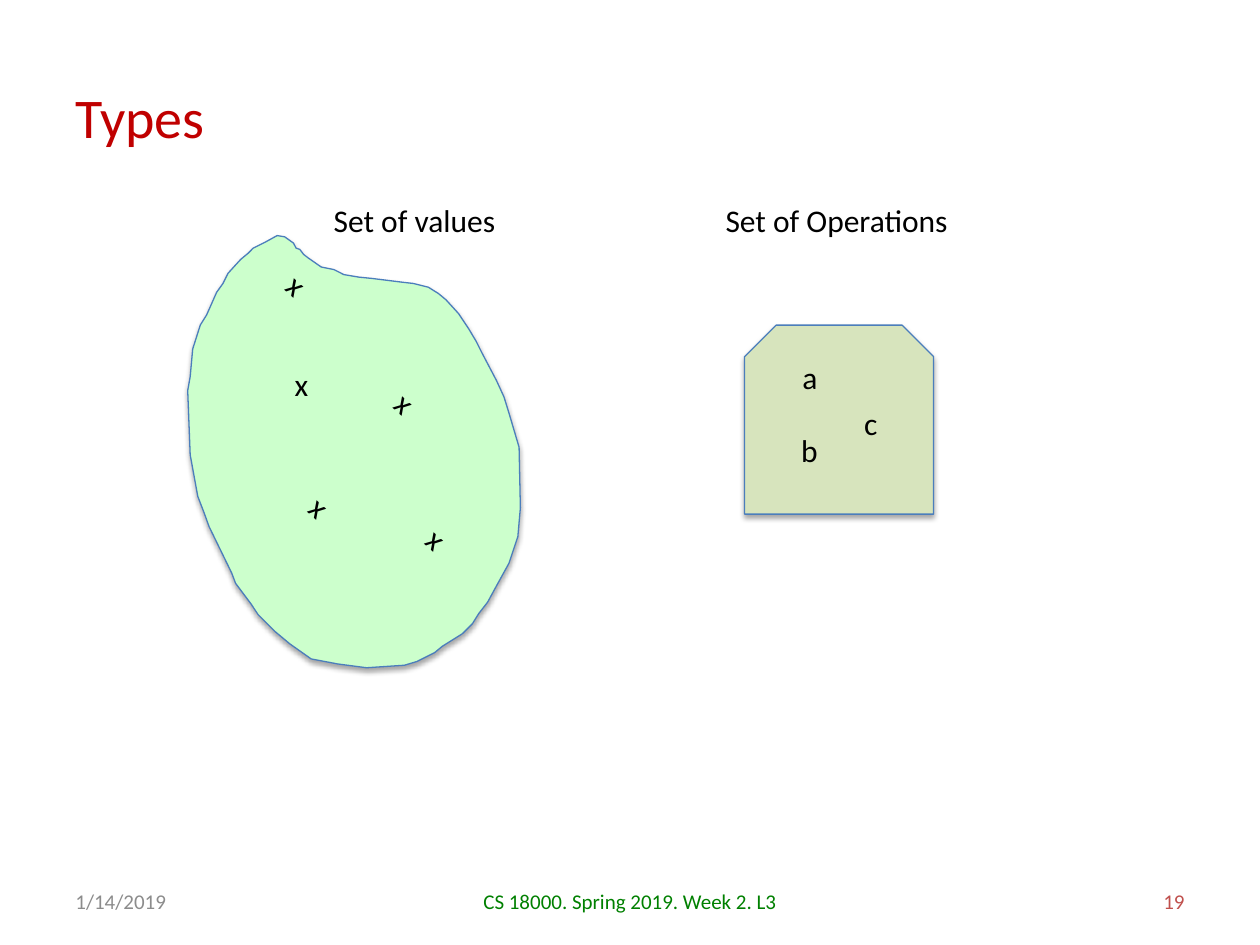
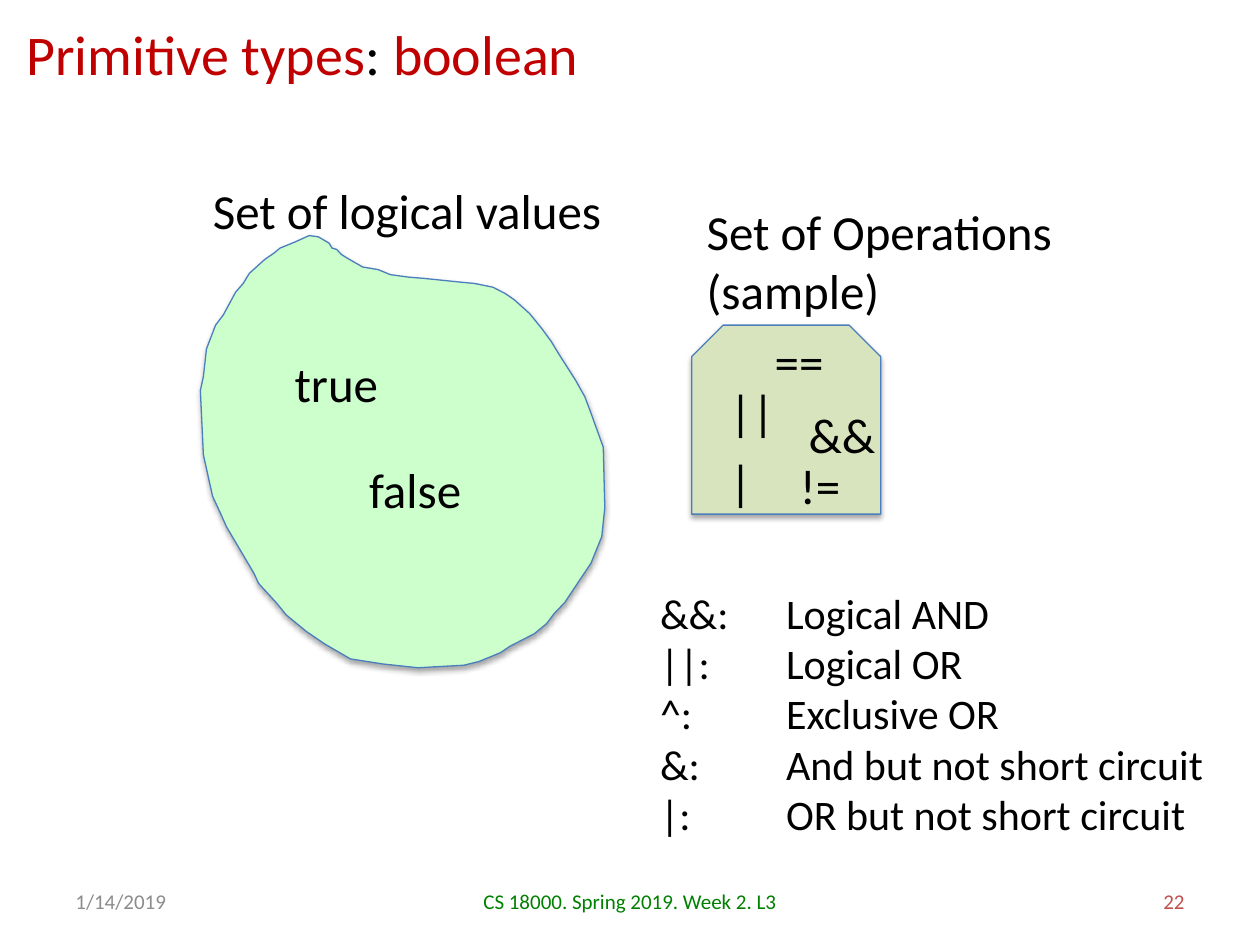
import pptx
import pptx.dml.color
import pptx.enum.shapes
import pptx.enum.text
import pptx.oxml
import pptx.oxml.ns
import pptx.util
from lxml import etree

Pt = pptx.util.Pt
RGBColor = pptx.dml.color.RGBColor
ALIGN = pptx.enum.text.PP_ALIGN
ANCHOR = pptx.enum.text.MSO_ANCHOR

BLACK = RGBColor(0x00, 0x00, 0x00)
TITLE_RED = RGBColor(0xC0, 0x00, 0x00)
NUMBER_RED = RGBColor(0xC0, 0x50, 0x4D)
COURSE_GREEN = RGBColor(0x00, 0x80, 0x00)
DATE_GRAY = RGBColor(0x8C, 0x8C, 0x8C)
VALUES_GREEN = RGBColor(0xCC, 0xFF, 0xCC)
OPERATIONS_OLIVE = RGBColor(0xD7, 0xE4, 0xBD)
OUTLINE_BLUE = RGBColor(0x4B, 0x7E, 0xBC)

FONT = "Calibri"
VALUES_TOP = 133.2
OPERATIONS_TOP = 185.8
OPERATIONS_SIDE = 108
OUTLINE_UNIT = 0.72
VALUES_OUTLINE = [
    (71, 2), (62, 7), (52, 12), (48, 16), (42, 21), (32, 32), (28, 40),
    (23, 47), (15, 65), (10, 73), (4, 92), (2, 114), (0, 125), (2, 176),
    (4, 187), (8, 209), (13, 222), (17, 233), (35, 270), (38, 278),
    (50, 294), (56, 303), (69, 316), (81, 326), (98, 338), (119, 342),
    (142, 345), (172, 343), (182, 340), (196, 333), (202, 328), (218, 318),
    (226, 310), (231, 302), (238, 293), (244, 282), (255, 262), (262, 241),
    (264, 218), (263, 170), (255, 143), (251, 130), (245, 117), (234, 96),
    (229, 86), (223, 76), (215, 64), (205, 53), (199, 48), (191, 43),
    (183, 41), (179, 40), (170, 39), (146, 36), (136, 35), (124, 33),
    (116, 29), (106, 27), (96, 20), (92, 17), (89, 13), (86, 12), (84, 8),
    (77, 3),
]


def set_font(font, size, color):
    font.name = FONT
    font.size = Pt(size)
    font.color.rgb = color


def add_box(page, left, top, width, height):
    return page.shapes.add_textbox(Pt(left), Pt(top), Pt(width), Pt(height))


def add_title(page, left, top, width, height, spans):
    """Add a title from (text, color) spans."""
    frame = add_box(page, left, top, width, height).text_frame
    frame.word_wrap = True
    frame.vertical_anchor = ANCHOR.MIDDLE
    for text, color in spans:
        span = frame.paragraphs[0].add_run()
        span.text = text
        set_font(span.font, 32, color)


def add_footer(page, number):
    for left, width, text, color, align in (
        (36, 168, "1/14/2019", DATE_GRAY, ALIGN.LEFT),
        (246, 228, "CS 18000. Spring 2019. Week 2. L3", COURSE_GREEN, ALIGN.CENTER),
        (516, 168, str(number), NUMBER_RED, ALIGN.RIGHT),
    ):
        frame = add_box(page, left, 500.5, width, 28.75).text_frame
        frame.word_wrap = True
        frame.vertical_anchor = ANCHOR.MIDDLE
        para = frame.paragraphs[0]
        para.text = text
        para.alignment = align
        set_font(para.font, 12, color)


def add_label(page, left, top, width, text, size, rotation=0, tab_stop=None):
    """Add unwrapped black text, one paragraph per line of text."""
    lines = text.split("\n")
    box = add_box(page, left, top, width, len(lines) * size * 1.21 + 7.2)
    box.rotation = rotation
    frame = box.text_frame
    frame.word_wrap = False
    for index, line in enumerate(lines):
        para = frame.add_paragraph() if index else frame.paragraphs[0]
        para.text = line
        if tab_stop:
            tabs = etree.SubElement(para._p.get_or_add_pPr(), pptx.oxml.ns.qn("a:tabLst"))
            etree.SubElement(tabs, pptx.oxml.ns.qn("a:tab"), pos=str(Pt(tab_stop)), algn="l")
        set_font(para.font, size, BLACK)


def style_region(shape, fill):
    """Give a region its fill, blue outline and soft shadow below."""
    shape.fill.solid()
    shape.fill.fore_color.rgb = fill
    shape.line.color.rgb = OUTLINE_BLUE
    shape.line.width = Pt(0.75)
    shape.shadow.inherit = False
    effects = shape._element.spPr.find(pptx.oxml.ns.qn("a:effectLst"))
    effects.append(pptx.oxml.parse_xml(
        f'<a:outerShdw {pptx.oxml.ns.nsdecls("a")} blurRad="{Pt(3.1)}" dist="{Pt(1.8)}"'
        ' dir="5400000" rotWithShape="0"><a:srgbClr val="000000">'
        '<a:alpha val="35000"/></a:srgbClr></a:outerShdw>'))


def add_values_region(page, left, stretch=1.0):
    scale = (Pt(OUTLINE_UNIT) * stretch, Pt(OUTLINE_UNIT))
    builder = page.shapes.build_freeform(*VALUES_OUTLINE[0], scale=scale)
    builder.add_line_segments(VALUES_OUTLINE[1:], close=True)
    style_region(builder.convert_to_shape(Pt(left), Pt(VALUES_TOP)), VALUES_GREEN)


def add_operations_region(page, left):
    shape = page.shapes.add_shape(
        pptx.enum.shapes.MSO_SHAPE.SNIP_2_SAME_RECTANGLE,
        Pt(left), Pt(OPERATIONS_TOP), Pt(OPERATIONS_SIDE), Pt(OPERATIONS_SIDE))
    style_region(shape, OPERATIONS_OLIVE)


def build_types(page):
    add_title(page, 36, 21.6, 648, 90, [("Types", TITLE_RED)])
    add_footer(page, 19)
    add_values_region(page, 107.3)
    add_label(page, 183.6, 111.6, 108, "Set of values", 18)
    add_label(page, 161.3, 205.2, 22.3, "x", 18)
    for left, top in ((234.7, 297.4), (167.8, 279.4), (154.8, 152.6), (216.7, 219.6)):
        add_label(page, left, top, 22.3, "x", 18, rotation=221.5)
    add_operations_region(page, 425.5)
    for left, top, width, text in (
        (407.5, 111.6, 143.3, "Set of Operations"),
        (451.4, 200.9, 23, "a"),
        (450.7, 242.6, 23.8, "b"),
        (486.7, 227.5, 22.3, "c"),
    ):
        add_label(page, left, top, width, text, 18)


def build_boolean(page):
    add_title(page, 8, 0, 338, 61.2, [
        ("Primitive types", TITLE_RED), (": ", BLACK), ("boolean", TITLE_RED)])
    add_footer(page, 22)
    add_values_region(page, 114.5, stretch=3.21 / 2.64)
    add_operations_region(page, 395.3)
    for left, top, width, text in (
        (114.5, 99.4, 238.3, "Set of logical values"),
        (161.3, 198.7, 62.6, "true"),
        (203.8, 259.2, 67.7, "false"),
        (396.7, 111.6, 213.8, "Set of Operations\n(sample)"),
        (450, 257, 38.2, "!="),
        (435.6, 185.8, 42.5, "=="),
        (409.7, 214.6, 40.3, "||"),
        (455, 227.5, 53.3, "&&"),
        (409.7, 254.2, 27.4, "|"),
    ):
        add_label(page, left, top, width, text, 28)
    meanings = (
        ("&&", "Logical AND"),
        ("||", "Logical OR"),
        ("^", "Exclusive OR"),
        ("&", "And but not short circuit"),
        ("|", "OR but not short circuit"),
    )
    legend = "\n".join(f"{operator}:\t{meaning}" for operator, meaning in meanings)
    add_label(page, 370.1, 331.9, 327.6, legend, 24, tab_stop=72)


def main():
    deck = pptx.Presentation()
    deck.slide_width, deck.slide_height = Pt(720), Pt(540)
    for build in (build_types, build_boolean):
        build(deck.slides.add_slide(deck.slide_layouts[6]))
    deck.save("out.pptx")


if __name__ == "__main__":
    main()
